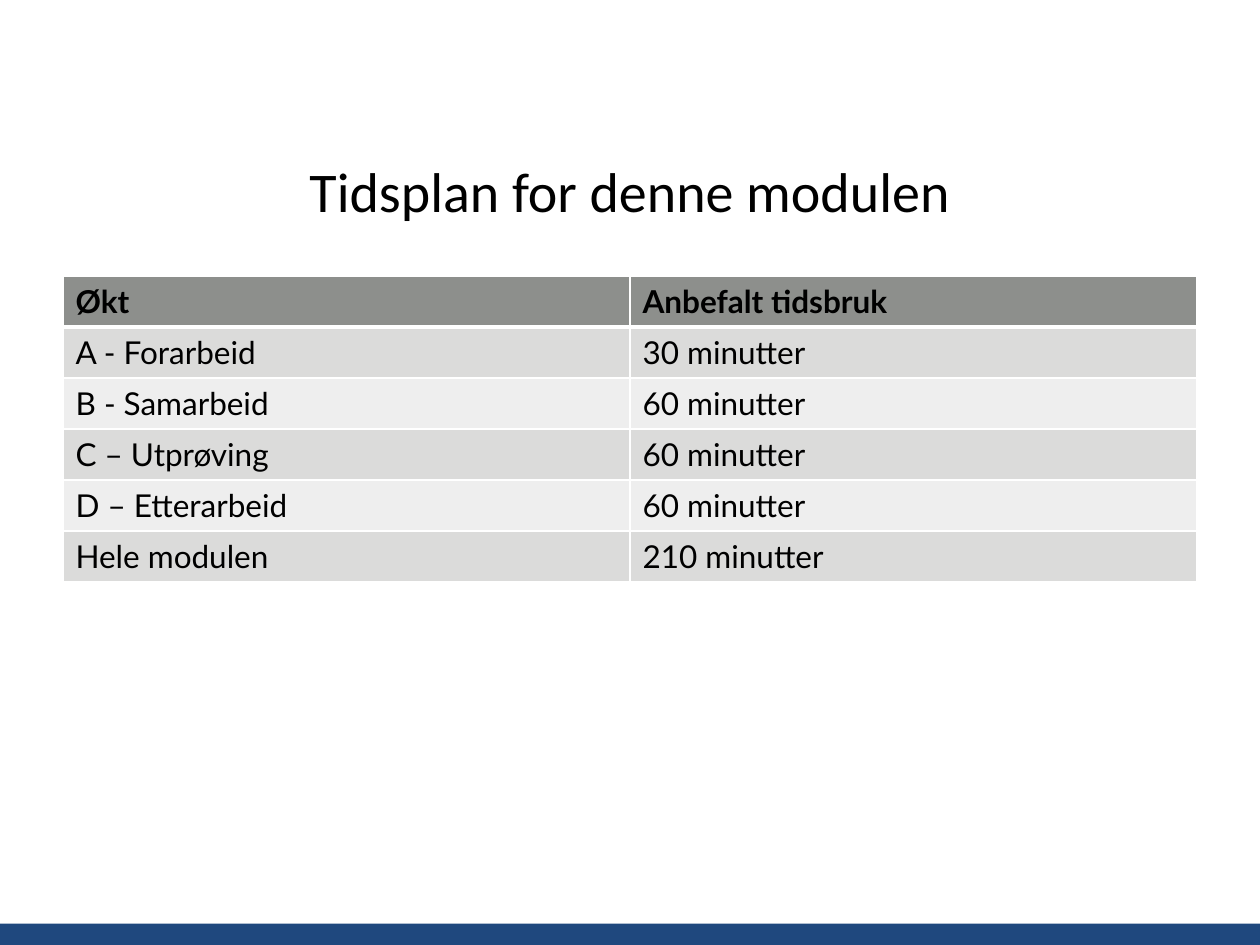
import lxml.etree
import pptx
import pptx.dml.color
import pptx.enum.shapes
import pptx.enum.text
import pptx.oxml.ns
import pptx.util

RGBColor = pptx.dml.color.RGBColor
WHITE = RGBColor(0xFF, 0xFF, 0xFF)
BLACK = RGBColor(0x00, 0x00, 0x00)
NAVY = RGBColor(0x1F, 0x48, 0x7E)
HEADER_GREY = RGBColor(0x8D, 0x8F, 0x8C)
BAND_GREYS = (RGBColor(0xDB, 0xDB, 0xDA), RGBColor(0xEE, 0xEE, 0xEE))

WIDTH = pptx.util.Inches(10)
HEIGHT = pptx.util.Inches(7.5)
MARGIN = pptx.util.Inches(0.5)
CONTENT_WIDTH = WIDTH - 2 * MARGIN
ROW_HEIGHT = pptx.util.Inches(0.405)

SCHEDULE = (
    ("Økt", "Anbefalt tidsbruk"),
    ("A - Forarbeid", "30 minutter"),
    ("B - Samarbeid", "60 minutter"),
    ("C – Utprøving", "60 minutter"),
    ("D – Etterarbeid", "60 minutter"),
    ("Hele modulen", "210 minutter"),
)


def format_font(font, name, size, bold=False):
    """Set the typeface, size and weight of black text."""
    font.name = name
    font.size = pptx.util.Pt(size)
    font.bold = bold
    font.color.rgb = BLACK


def add_footer_band(page):
    """Draw the coloured band along the bottom edge."""
    top = pptx.util.Inches(7.33)
    band = page.shapes.add_shape(
        pptx.enum.shapes.MSO_SHAPE.RECTANGLE, 0, top, WIDTH, HEIGHT - top)
    band.shadow.inherit = False
    band.fill.solid()
    band.fill.fore_color.rgb = NAVY
    band.line.fill.background()


def set_title(page, text):
    """Place and format the title placeholder."""
    title = page.shapes.title
    title.left, title.top = MARGIN, pptx.util.Inches(1)
    title.width, title.height = CONTENT_WIDTH, pptx.util.Inches(1.01)
    title.text_frame.text = text
    title.text_frame.vertical_anchor = pptx.enum.text.MSO_ANCHOR.MIDDLE
    para = title.text_frame.paragraphs[0]
    para.alignment = pptx.enum.text.PP_ALIGN.CENTER
    format_font(para.font, "Calibri", 32)


def set_border(cell, side, points):
    """Draw a white line on one side of a cell."""
    qn = pptx.oxml.ns.qn
    properties = cell._tc.get_or_add_tcPr()
    line = lxml.etree.SubElement(
        properties, qn(f"a:ln{side}"), w=str(pptx.util.Pt(points)))
    fill = lxml.etree.SubElement(line, qn("a:solidFill"))
    lxml.etree.SubElement(fill, qn("a:srgbClr"), val=str(WHITE))


def format_cell(cell, text, row):
    """Write a cell and style it by its row number."""
    for side in "LRTB":
        under_header = (row, side) in ((0, "B"), (1, "T"))
        set_border(cell, side, 3 if under_header else 1)
    cell.fill.solid()
    cell.fill.fore_color.rgb = BAND_GREYS[(row - 1) % 2] if row else HEADER_GREY
    cell.text = text
    format_font(cell.text_frame.paragraphs[0].font, "Lato", 18, bold=row == 0)


def add_schedule(page):
    """Add the table of sessions and recommended times."""
    table = page.shapes.add_table(
        len(SCHEDULE), len(SCHEDULE[0]), MARGIN, pptx.util.Inches(2.19),
        CONTENT_WIDTH, ROW_HEIGHT * len(SCHEDULE)).table
    for row, texts in enumerate(SCHEDULE):
        for column, text in enumerate(texts):
            format_cell(table.cell(row, column), text, row)


def main():
    """Build the slide and save the deck."""
    deck = pptx.Presentation()
    deck.slide_width, deck.slide_height = WIDTH, HEIGHT
    page = deck.slides.add_slide(deck.slide_layouts.get_by_name("Title Only"))
    add_footer_band(page)
    set_title(page, "Tidsplan for denne modulen")
    add_schedule(page)
    deck.save("out.pptx")


if __name__ == "__main__":
    main()
